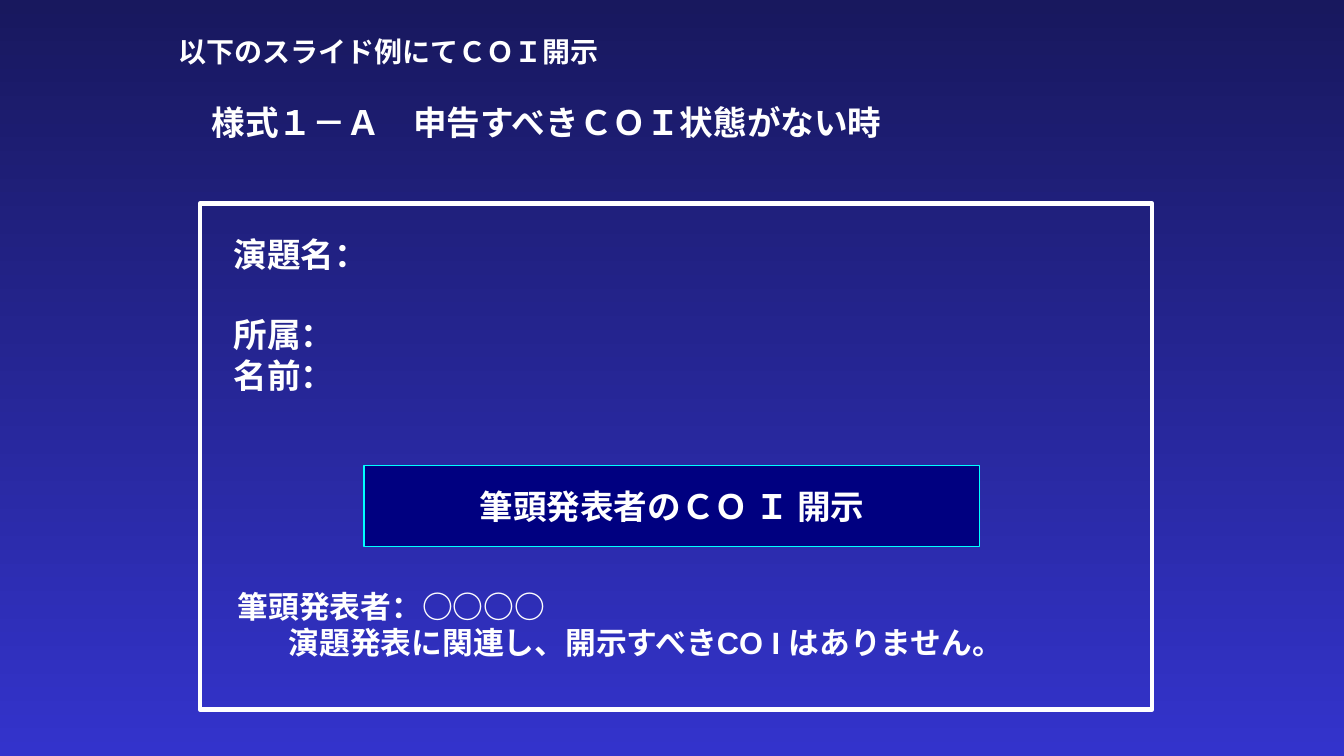
from dataclasses import dataclass

from pptx import Presentation
from pptx.dml.color import RGBColor
from pptx.enum.shapes import MSO_SHAPE
from pptx.enum.text import MSO_ANCHOR, MSO_AUTO_SIZE, PP_ALIGN
from pptx.util import Pt

RECT = MSO_SHAPE.RECTANGLE
MIDDLE, TOP = MSO_ANCHOR.MIDDLE, MSO_ANCHOR.TOP
LEFT, CENTER = PP_ALIGN.LEFT, PP_ALIGN.CENTER
FIXED = MSO_AUTO_SIZE.NONE
WHITE = "FFFFFF"
TITLE_ONLY = 5


@dataclass
class Line:
    text: str
    size: float
    before: float = 0
    indent: float = 0
    spacing: float = 1.0


@dataclass
class Block:
    box: tuple[float, float, float, float]
    lines: list[Line]
    font: str = "Arial"


TITLE = Block((260, 332.6, 440, 57.6), [Line("筆頭発表者のＣＯ Ｉ 開示", 24)])
BLOCKS = [
    Block((162.7, 421.2, 643, 75.6), [
        Line("筆頭発表者：○○○○", 22, 4.4, spacing=0.8),
        Line("演題発表に関連し、開示すべきCO I はありません。", 22, 4.4, 36.4, 0.8),
    ]),
    Block((120.2, 20.9, 704.2, 85), [
        Line("以下のスライド例にてＣＯＩ開示", 20),
        Line("様式１－Ａ　申告すべきＣＯＩ状態がない時", 24, 24, 24),
    ], "Noto Sans CJK JP"),
    Block((159.8, 163.4, 648, 127.4), [
        Line("演題名：", 24),
        Line("所属：", 24, 28.8),
        Line("名前：", 24),
    ]),
]
FRAME = (142.6, 145.4, 680.4, 361.4)


def color(code: str) -> RGBColor:
    return RGBColor.from_string(code)


def place(shape, box: tuple[float, float, float, float]) -> None:
    for name, value in zip(("left", "top", "width", "height"), box):
        setattr(shape, name, Pt(value))


def border(shape, code: str, width: float) -> None:
    shape.line.color.rgb = color(code)
    shape.line.width = Pt(width)


def write(frame, block: Block, align=LEFT, anchor=TOP) -> None:
    settings = {"word_wrap": True, "auto_size": FIXED, "vertical_anchor": anchor}
    for name, value in settings.items():
        setattr(frame, name, value)
    for i, line in enumerate(block.lines):
        para = frame.add_paragraph() if i else frame.paragraphs[0]
        layout = {"alignment": align, "space_before": Pt(line.before),
                  "line_spacing": line.spacing}
        for name, value in layout.items():
            setattr(para, name, value)
        if line.indent:
            props = para._p.get_or_add_pPr()
            props.set("marL", str(Pt(line.indent)))
            props.set("indent", "0")
        run = para.add_run()
        run.text = line.text
        style = {"name": block.font, "size": Pt(line.size), "bold": True}
        for name, value in style.items():
            setattr(run.font, name, value)
        run.font.color.rgb = color(WHITE)


def main() -> None:
    deck = Presentation()
    deck.slide_width, deck.slide_height = Pt(960), Pt(540)
    slide = deck.slides.add_slide(deck.slide_layouts[TITLE_ONLY])

    back = slide.background.fill
    back.gradient()
    back.gradient_angle = 270
    for stop, code, at in zip(back.gradient_stops, ("18185E", "3333CC"), (0, 1)):
        stop.color.rgb = color(code)
        stop.position = at

    title = slide.shapes.title
    place(title, TITLE.box)
    title.fill.solid()
    title.fill.fore_color.rgb = color("000080")
    border(title, "00FFFF", 0.75)
    write(title.text_frame, TITLE, CENTER, MIDDLE)

    for block in BLOCKS:
        text = slide.shapes.add_textbox(*map(Pt, block.box))
        write(text.text_frame, block)

    frame = slide.shapes.add_shape(RECT, *map(Pt, FRAME))
    frame.shadow.inherit = False
    frame.fill.background()
    border(frame, WHITE, 3)

    deck.save("out.pptx")


if __name__ == "__main__":
    main()
